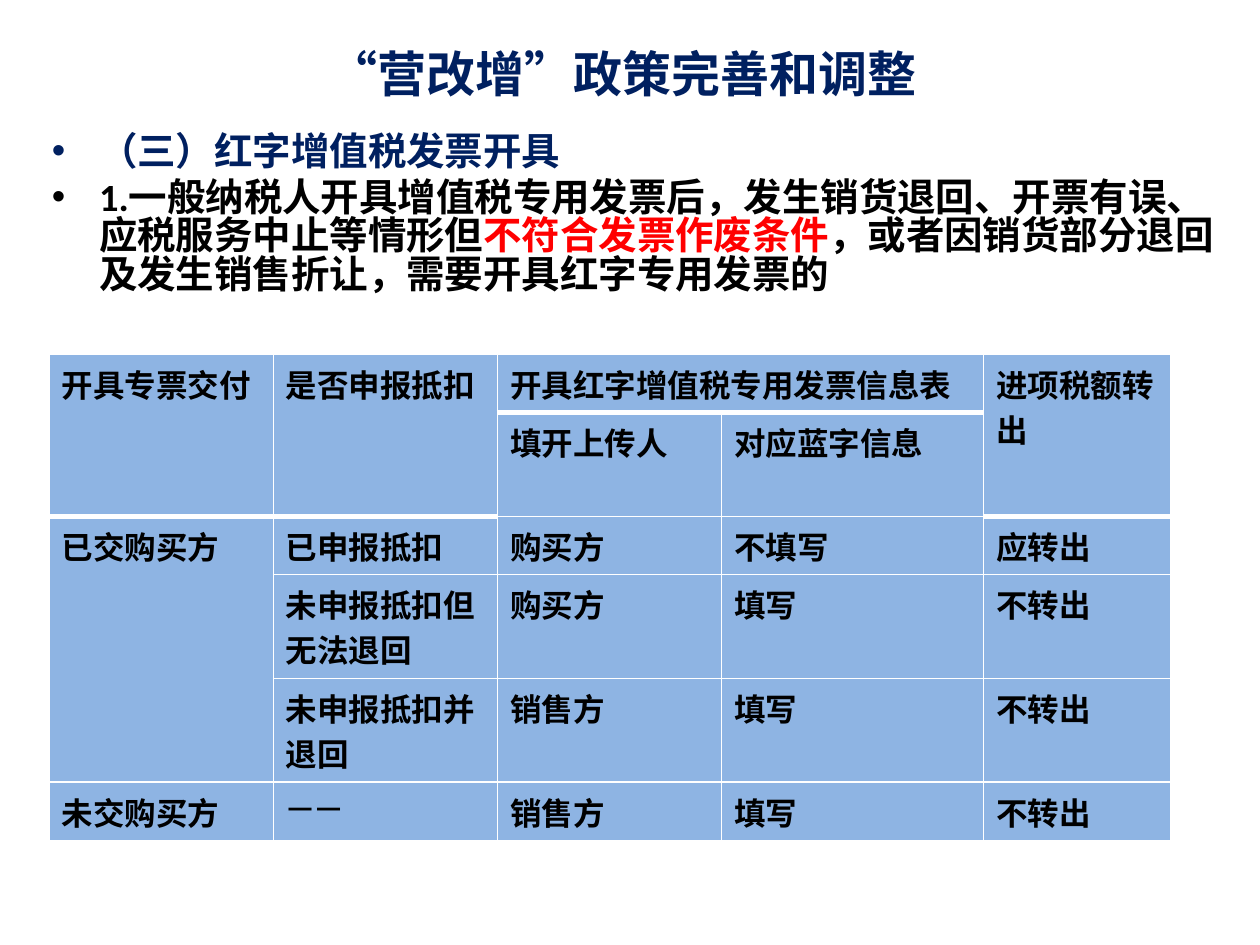
from lxml.etree import SubElement
from pptx import Presentation
from pptx.dml.color import RGBColor
from pptx.enum.text import MSO_ANCHOR, MSO_AUTO_SIZE, PP_ALIGN
from pptx.oxml.ns import qn
from pptx.util import Cm, Pt

THEME = {
    "font": "Calibri",
    "title": 28, "body": 22, "cell": 18,
    "navy": "002060", "black": "000000", "red": "FF0000",
    "fill": "8EB4E3", "border": "FFFFFF",
}

TITLE = "“营改增”政策完善和调整"
BODY = [
    [("（三）红字增值税发票开具", "navy")],
    [("1.一般纳税人开具增值税专用发票后，发生销货退回、开票有误、应税服务中止等情形但", "black"),
     ("不符合发票作废条件", "red"),
     ("，或者因销货部分退回及发生销售折让，需要开具红字专用发票的", "black")],
]
ROWS = [
    ["开具专票交付", "是否申报抵扣", "开具红字增值税专用发票信息表", "", "进项税额转出"],
    ["", "", "填开上传人", "对应蓝字信息", ""],
    ["已交购买方", "已申报抵扣", "购买方", "不填写", "应转出"],
    ["", "未申报抵扣但无法退回", "购买方", "填写", "不转出"],
    ["", "未申报抵扣并退回", "销售方", "填写", "不转出"],
    ["未交购买方", "——", "销售方", "填写", "不转出"],
]
MERGES = [((0, 0), (1, 0)), ((0, 1), (1, 1)), ((0, 2), (0, 3)),
          ((0, 4), (1, 4)), ((2, 0), (4, 0))]
COL_WIDTHS = [4.52, 4.52, 4.52, 5.28, 3.77]
ROW_HEIGHTS = [0.56] * 2 + [1.12] * 4
TABLE_HEIGHT = 7.85


def place(sp, left, top, width, height):
    box = dict(left=left, top=top, width=width, height=height)
    for name, value in box.items():
        setattr(sp, name, Cm(value))


def add_run(p, text, size, color):
    r = p.add_run()
    r.text = text
    for name, value in dict(name=THEME["font"], size=Pt(THEME[size]), bold=True).items():
        setattr(r.font, name, value)
    r.font.color.rgb = RGBColor.from_string(THEME[color])


def add_borders(cell, widths):
    """Draw the cell's sides; widths maps L, R, T, B to points."""
    tc_pr = cell._tc.get_or_add_tcPr()
    for i, (side, width) in enumerate(widths.items()):
        ln = tc_pr.makeelement(qn(f"a:ln{side}"), {"w": str(Pt(width))})
        fill = SubElement(ln, qn("a:solidFill"))
        SubElement(fill, qn("a:srgbClr"), val=THEME["border"])
        tc_pr.insert(i, ln)


def add_title(s):
    sp = s.shapes.title
    place(sp, 1.27, 0.76, 22.56, 1.42)
    tf = sp.text_frame
    tf.vertical_anchor = MSO_ANCHOR.MIDDLE
    tf.auto_size = MSO_AUTO_SIZE.NONE
    p = tf.paragraphs[0]
    p.alignment = PP_ALIGN.CENTER
    add_run(p, TITLE, "title", "navy")


def add_body(s):
    sp = s.placeholders[1]
    place(sp, 0.79, 2.59, 24, 15.67)
    tf = sp.text_frame
    tf.auto_size = MSO_AUTO_SIZE.NONE
    for i, runs in enumerate(BODY):
        p = tf.add_paragraph() if i else tf.paragraphs[0]
        p.line_spacing = 0.83
        for text, color in runs:
            add_run(p, text, "body", color)


def add_invoice_table(s):
    frame = s.shapes.add_table(len(ROWS), len(COL_WIDTHS), Cm(0.99), Cm(7.14),
                               Cm(sum(COL_WIDTHS)), Cm(TABLE_HEIGHT))
    table = frame.table
    table.horz_banding = False
    for col, width in zip(table.columns, COL_WIDTHS):
        col.width = Cm(width)
    for row, height in zip(table.rows, ROW_HEIGHTS):
        row.height = Cm(height)
    frame.height = Cm(TABLE_HEIGHT)
    for first, last in MERGES:
        table.cell(*first).merge(table.cell(*last))

    for i, texts in enumerate(ROWS):
        for j, text in enumerate(texts):
            cell = table.cell(i, j)
            cell.fill.solid()
            cell.fill.fore_color.rgb = RGBColor.from_string(THEME["fill"])
            if i == 0 or (i == 1 and cell.is_spanned):
                add_borders(cell, {"L": 1, "R": 1, "T": 1, "B": 3})
            if text:
                add_run(cell.text_frame.paragraphs[0], text, "cell", "black")


def main():
    prs = Presentation()
    prs.slide_width, prs.slide_height = Cm(25.4), Cm(19.05)
    s = prs.slides.add_slide(prs.slide_layouts[1])
    add_title(s)
    add_body(s)
    add_invoice_table(s)
    prs.save("out.pptx")


if __name__ == "__main__":
    main()
